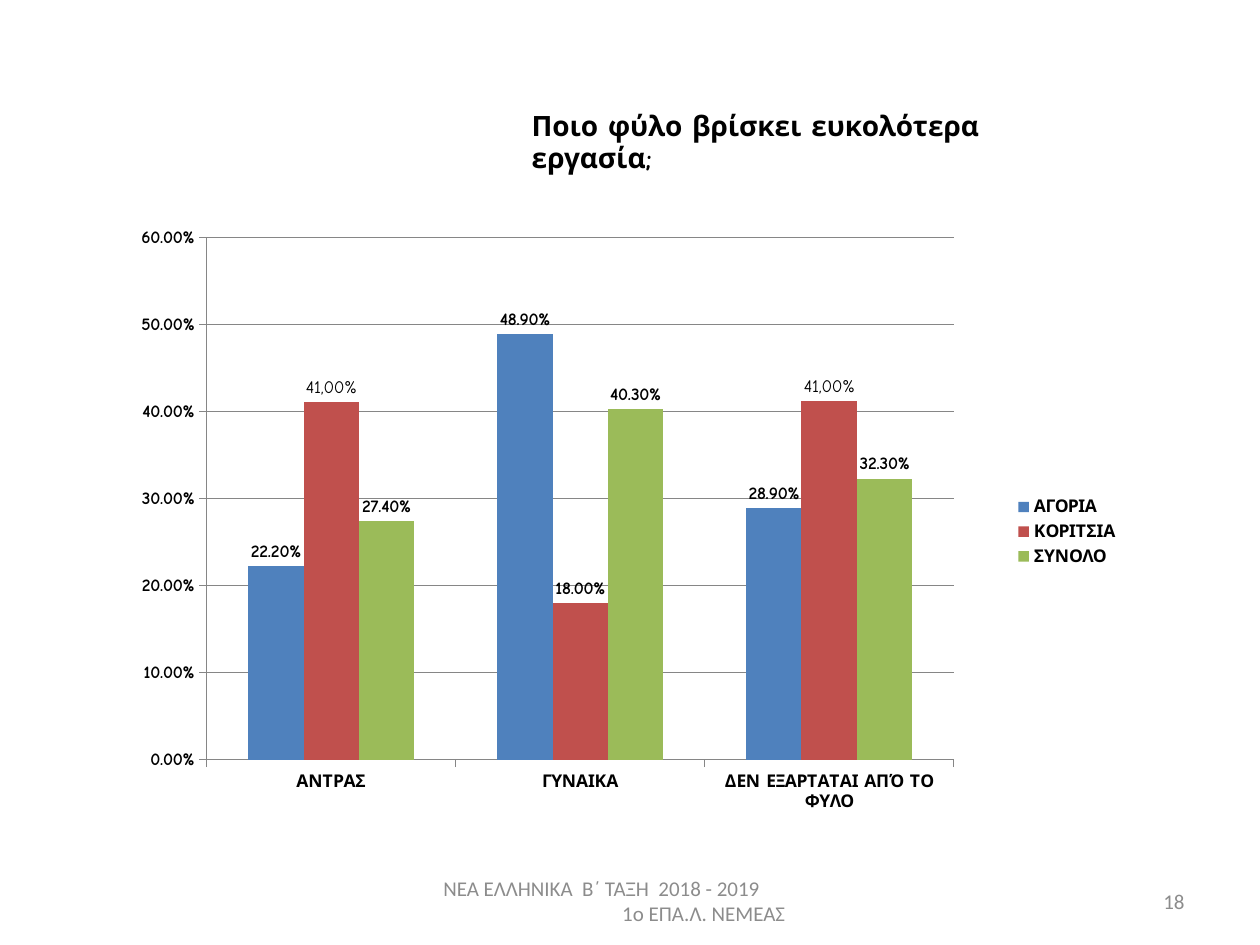
from lxml import etree
from pptx import Presentation
from pptx.chart.data import CategoryChartData
from pptx.dml.color import RGBColor
from pptx.enum.chart import XL_CHART_TYPE as ChartType, XL_LABEL_POSITION as LabelPos
from pptx.enum.chart import XL_LEGEND_POSITION as LegendPos, XL_TICK_MARK as Tick
from pptx.enum.text import MSO_ANCHOR as Anchor, PP_ALIGN as Align
from pptx.oxml.ns import qn
from pptx.util import Inches, Pt

COLORS = {"text": "000000", "muted": "8C8C8C", "axis": "868686",
          "boys": "4F81BD", "girls": "C0504D", "total": "9BBB59"}
CATEGORIES = ["ΑΝΤΡΑΣ", "ΓΥΝΑΙΚΑ", "ΔΕΝ ΕΞΑΡΤΑΤΑΙ ΑΠΌ ΤΟ ΦΥΛΟ"]
# name, values, colour, labels typed by hand
SERIES = [
    ("ΑΓΟΡΙΑ ", (0.222, 0.489, 0.289), "boys", {}),
    ("ΚΟΡΙΤΣΙΑ", (0.411, 0.18, 0.412), "girls", {0: "41,00%", 2: "41,00%"}),
    ("ΣΥΝΟΛΟ", (0.274, 0.403, 0.323), "total", {}),
]
PERCENT = "0.00%"
PLOT_AREA = {"x": 0.105, "y": 0.033, "w": 0.723, "h": 0.829}


def rgb(name):
    return RGBColor.from_string(COLORS[name])


def set_font(font, size, name="Comic Neue", color="text", bold=False):
    font.size, font.name, font.bold = Pt(size), name, bold
    font.color.rgb = rgb(color)


def write(p, text, align=Align.LEFT, indent=0, **fmt):
    p.alignment = align
    if indent:
        p._p.get_or_add_pPr().set("marL", str(Inches(indent)))
    r = p.add_run()
    r.text = text
    set_font(r.font, **fmt)


def add_heading(s, x, y, w, h):
    table = s.shapes.add_table(1, 1, Inches(x), Inches(y), Inches(w), Inches(h)).table
    table.first_row = table.horz_banding = False
    cell = table.cell(0, 0)
    cell.fill.background()
    cell.vertical_anchor = Anchor.BOTTOM
    cell.margin_left = cell.margin_right = cell.margin_top = cell.margin_bottom = 0
    write(cell.text_frame.paragraphs[0], "Ποιο φύλο βρίσκει ευκολότερα εργασία;",
          size=16, bold=True)


def place_plot(chart):
    """Fix the inner plot area as fractions of the chart box."""
    area = chart._chartSpace.chart.plotArea
    for old in area.findall(qn("c:layout")):
        area.remove(old)
    layout = etree.Element(qn("c:layout"))
    manual = etree.SubElement(layout, qn("c:manualLayout"))
    settings = {"layoutTarget": "inner", "xMode": "edge", "yMode": "edge", **PLOT_AREA}
    for tag, value in settings.items():
        etree.SubElement(manual, qn(f"c:{tag}")).set("val", str(value))
    area.insert(0, layout)


def format_series(ser, color, typed_labels):
    ser.format.fill.solid()
    ser.format.fill.fore_color.rgb = rgb(color)
    ser.invert_if_negative = False
    labels = ser.data_labels
    labels.show_value = True
    labels.number_format, labels.number_format_is_linked = PERCENT, False
    labels.position = LabelPos.OUTSIDE_END
    set_font(labels.font, 10, bold=True)
    for i, text in typed_labels.items():
        label = ser.points[i].data_label
        write(label.text_frame.paragraphs[0], text, align=Align.CENTER, size=10)
        label.position = LabelPos.OUTSIDE_END


def add_bar_chart(s, x, y, w, h):
    data = CategoryChartData(number_format=PERCENT)
    data.categories = CATEGORIES
    for name, values, *_ in SERIES:
        data.add_series(name, values)
    chart = s.shapes.add_chart(ChartType.COLUMN_CLUSTERED, Inches(x), Inches(y),
                               Inches(w), Inches(h), data).chart
    set_font(chart.font, 10, bold=True)
    chart.has_title = False
    chart.has_legend = True
    chart.legend.position = LegendPos.RIGHT
    chart.legend.include_in_layout = False

    plot = chart.plots[0]
    plot.gap_width, plot.overlap, plot.vary_by_categories = 150, 0, False
    for ser, (_, _, color, typed_labels) in zip(plot.series, SERIES):
        format_series(ser, color, typed_labels)

    value_axis = chart.value_axis
    value_axis.minimum_scale, value_axis.maximum_scale, value_axis.major_unit = 0, 0.6, 0.1
    value_axis.tick_labels.number_format = PERCENT
    value_axis.tick_labels.number_format_is_linked = False
    value_axis.has_major_gridlines = True
    for axis in (chart.category_axis, value_axis):
        axis.major_tick_mark, axis.minor_tick_mark = Tick.OUTSIDE, Tick.NONE
    for part in (chart.category_axis, value_axis, value_axis.major_gridlines):
        part.format.line.color.rgb = rgb("axis")
        part.format.line.width = Pt(0.75)
    place_plot(chart)


def add_footer_box(s, x, y, w, h, lines):
    """lines holds (text, paragraph options) pairs, one for each paragraph."""
    tf = s.shapes.add_textbox(Inches(x), Inches(y), Inches(w), Inches(h)).text_frame
    tf.word_wrap = True
    tf.vertical_anchor = Anchor.MIDDLE
    for i, (text, options) in enumerate(lines):
        p = tf.add_paragraph() if i else tf.paragraphs[0]
        write(p, text, size=12, name="Calibri", color="muted", **options)


def main():
    prs = Presentation()
    prs.slide_width, prs.slide_height = Inches(10), Inches(7.5)
    s = prs.slides.add_slide(prs.slide_layouts[6])
    add_footer_box(s, 3.42, 6.95, 3.17, 0.4,
                   [("ΝΕΑ ΕΛΛΗΝΙΚΑ  Β΄ ΤΑΞΗ  2018 - 2019", {}),
                    ("1ο ΕΠΑ.Λ. ΝΕΜΕΑΣ", {"indent": 1.42})])
    add_footer_box(s, 7.17, 6.95, 2.33, 0.4, [("18", {"align": Align.RIGHT})])
    add_bar_chart(s, 0.78, 1.72, 8.2, 5)
    add_heading(s, 4.22, 0.86, 4.3, 0.39)
    prs.save("out.pptx")


if __name__ == "__main__":
    main()
